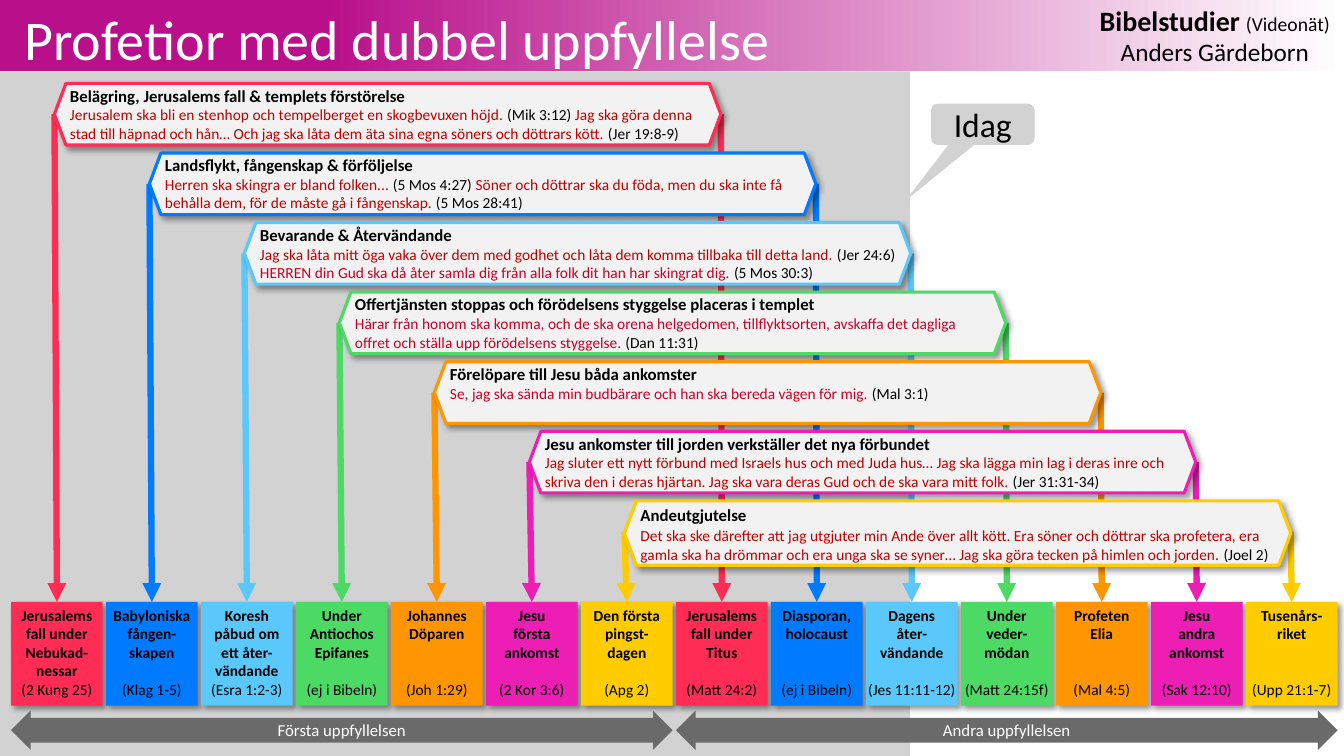
from lxml.etree import SubElement
from pptx import Presentation
from pptx.dml.color import RGBColor
from pptx.enum.shapes import MSO_CONNECTOR as Connector, MSO_SHAPE as Shape
from pptx.enum.text import MSO_ANCHOR as Anchor, MSO_AUTO_SIZE as AutoSize, PP_ALIGN as Align
from pptx.oxml.ns import qn
from pptx.util import Pt

COLOURS = {
    "red": "FF2D55", "blue": "007AFF", "sky": "5AC8FA", "green": "4CD964",
    "orange": "FF9500", "pink": "ED1EB4", "yellow": "FFCC00", "purple": "B90F8A",
    "white": "FFFFFF", "black": "000000", "past": "D2D2D2", "banner": "F2F2F2",
    "span": "6A6A6A", "quote": "C00000", "crimson": "C80026",
}
THEMES = ["red", "blue", "sky", "green", "orange", "pink", "yellow"]
STYLES = {
    "heading": ("black", {"size": Pt(12), "bold": True}),
    "quote": ("quote", {"size": Pt(11), "bold": False}),
    "crimson": ("crimson", {"size": Pt(11), "bold": False}),
    "reference": ("black", {"size": Pt(11), "bold": False}),
    "label": ("black", {"size": Pt(11), "bold": True}),
    "span": ("white", {"size": Pt(12)}),
    "title": ("white", {"size": Pt(40)}),
    "today": ("black", {"size": Pt(24)}),
    "channel": ("black", {"size": Pt(20), "bold": True}),
    "site": ("black", {"size": Pt(14)}),
    "author": ("black", {"size": Pt(18)}),
}
PITCH, COLUMN_WIDTH, LEFT = 67.85, 65.5, 7.9
LINE_HEIGHT = 13.4

EVENTS = [
    ("Jerusalems fall under Nebukad-nessar", 4, "(2 Kung 25)"),
    ("Babyloniska fången-skapen", 3, "(Klag 1-5)"),
    ("Koresh\npåbud om\nett åter-vändande", 4, "(Esra 1:2-3)"),
    ("Under\nAntiochos\nEpifanes", 3, "(ej i Bibeln)"),
    ("Johannes\nDöparen", 2, "(Joh 1:29)"),
    ("Jesu\nförsta\nankomst", 3, "(2 Kor 3:6)"),
    ("Den första pingst-\ndagen", 3, "(Apg 2)"),
    ("Jerusalems fall under Titus", 3, "(Matt 24:2)"),
    ("Diasporan,\nholocaust", 2, "(ej i Bibeln)"),
    ("Dagens\nåter-vändande", 3, "(Jes 11:11-12)"),
    ("Under\nveder-\nmödan", 3, "(Matt 24:15f)"),
    ("Profeten\nElia", 2, "(Mal 4:5)"),
    ("Jesu\nandra ankomst", 3, "(Sak 12:10)"),
    ("Tusenårs-\nriket", 2, "(Upp 21:1-7)"),
]
PROPHECIES = [
    ("Belägring, Jerusalems fall & templets förstörelse",
     [[("quote", "Jerusalem ska bli en stenhop och tempelberget en skogbevuxen höjd."),
       ("reference", " (Mik 3:12) "),
       ("quote", "Jag ska göra denna stad till häpnad och hån… Och jag ska låta dem äta "
                 "sina egna söners och döttrars kött."),
       ("reference", " (Jer 19:8-9)")]]),
    ("Landsflykt, fångenskap & förföljelse",
     [[("quote", "Herren ska skingra er bland folken... "),
       ("reference", "(5 Mos 4:27) "),
       ("quote", "Söner och döttrar ska du föda, men du ska inte få behålla dem, "
                 "för de måste gå i fångenskap. "),
       ("reference", "(5 Mos 28:41)")]]),
    ("Bevarande & Återvändande",
     [[("quote", "Jag ska låta mitt öga vaka över dem med godhet och låta dem komma "
                 "tillbaka till detta land. "),
       ("reference", "(Jer 24:6)")],
      [("crimson", "HERREN din Gud ska då åter samla dig från alla folk dit han har "
                   "skingrat dig. "),
       ("reference", "(5 Mos 30:3)")]]),
    ("Offertjänsten stoppas och förödelsens styggelse placeras i templet",
     [[("crimson", "Härar från honom ska komma, och de ska orena helgedomen, tillflyktsorten, "
                   "avskaffa det dagliga offret och ställa upp förödelsens styggelse. "),
       ("reference", "(Dan 11:31)")]]),
    ("Förelöpare till Jesu båda ankomster",
     [[("crimson", "Se, jag ska sända min budbärare och han ska bereda vägen för mig."),
       ("reference", " (Mal 3:1)")]]),
    ("Jesu ankomster till jorden verkställer det nya förbundet",
     [[("quote", "Jag sluter ett nytt förbund med Israels hus och med Juda hus… Jag ska lägga "
                 "min lag i deras inre och skriva den i deras hjärtan. Jag ska vara deras Gud "
                 "och de ska vara mitt folk."),
       ("reference", " (Jer 31:31-34)")]]),
    ("Andeutgjutelse",
     [[("quote", "Det ska ske därefter att jag utgjuter min Ande över allt kött. Era söner och "
                 "döttrar ska profetera, era gamla ska ha drömmar och era unga ska se syner… "
                 "Jag ska göra tecken på himlen och jorden."),
       ("reference", " (Joel 2)")]]),
]


def colour(name):
    return RGBColor.from_string(COLOURS[name])


def assign(target, values):
    for name, value in values.items():
        setattr(target, name, value)


def add_box(slide, kind, box, fill, adjustments=()):
    shape = slide.shapes.add_shape(kind, *map(Pt, box))
    shape.shadow.inherit = False
    shape.fill.solid()
    shape.fill.fore_color.rgb = colour(fill)
    shape.line.fill.background()
    for index, value in enumerate(adjustments):
        shape.adjustments[index] = value
    return shape


def add_shadow(shape):
    effects = shape.element.spPr.find(qn("a:effectLst"))
    shadow = SubElement(effects, qn("a:outerShdw"), blurRad=str(Pt(4)), dist=str(Pt(3)),
                        dir="2700000", algn="tl", rotWithShape="0")
    black = SubElement(shadow, qn("a:srgbClr"), val=COLOURS["black"])
    SubElement(black, qn("a:alpha"), val="40000")


def write(shape, paragraphs, margins, align=Align.LEFT, **frame_format):
    frame = shape.text_frame
    sides = ("margin_left", "margin_top", "margin_right", "margin_bottom")
    assign(frame, {"word_wrap": True, "vertical_anchor": Anchor.TOP,
                   **dict(zip(sides, map(Pt, margins))), **frame_format})
    for index, runs in enumerate(paragraphs):
        paragraph = frame.add_paragraph() if index else frame.paragraphs[0]
        paragraph.alignment = align
        for style, text in runs:
            run = paragraph.add_run()
            run.text = text
            ink, font_format = STYLES[style]
            assign(run.font, {"name": "Calibri", **font_format})
            run.font.color.rgb = colour(ink)
    return frame.paragraphs


def draw_header(slide, left, top, width, height):
    band = add_box(slide, Shape.RECTANGLE, (left, top, width, height), "purple")
    band.fill.gradient()
    band.fill.gradient_angle = 0
    for stop, (position, name) in zip(band.fill.gradient_stops, [(0.24, "purple"), (1, "white")]):
        stop.position = position
        stop.color.rgb = colour(name)
    credit = slide.shapes.add_textbox(Pt(left + width - 184.5), Pt(top + 2.2), Pt(184.5), Pt(46))
    write(credit, [[("channel", "Bibelstudier"), ("author", " "), ("site", "(Videonät)")],
                   [("author", "Anders Gärdeborn")]],
          (7.2, 0, 7.2, 0), Align.CENTER, word_wrap=False, auto_size=AutoSize.SHAPE_TO_FIT_TEXT)
    title = slide.shapes.title
    assign(title, {"left": Pt(left), "top": Pt(top), "width": Pt(width), "height": Pt(height)})
    write(title, [[("title", "Profetior med dubbel uppfyllelse")]], (17.3, 2.9, 7.2, 0),
          auto_size=AutoSize.NONE)
    slide.shapes.element.append(title.element)


def draw_events(slide, left, top, height):
    boxes = []
    for index, (label, lines, reference) in enumerate(EVENTS):
        theme = THEMES[index % len(THEMES)]
        box = add_box(slide, Shape.RECTANGLE,
                      (left + index * PITCH, top, COLUMN_WIDTH, height), theme)
        add_shadow(box)
        paragraphs = write(box, [[("label", line)] for line in label.split("\n")]
                           + [[("reference", reference)]], (0, 2.9, 0, 0), Align.CENTER)
        paragraphs[-1].space_before = Pt((4 - lines) * LINE_HEIGHT)
        boxes.append(box)
    return boxes


def draw_prophecy(slide, left, top, width, height, theme, prophecy, targets):
    for start, target in zip((left, left + width), targets):
        arrow = slide.shapes.add_connector(Connector.STRAIGHT, Pt(start), Pt(top + 22),
                                           target.left, target.top)
        arrow.end_connect(target, 0)
        arrow.line.width = Pt(4.5)
        arrow.line.color.rgb = colour(theme)
        SubElement(arrow.line._get_or_add_ln(), qn("a:tailEnd"), type="triangle")
        SubElement(arrow.element.spPr, qn("a:effectLst"))
    banner = add_box(slide, Shape.LEFT_RIGHT_ARROW, (left, top, width, height),
                     "banner", (1, 0.187))
    banner.line.width = Pt(2.25)
    banner.line.color.rgb = colour(theme)
    add_shadow(banner)
    heading, quotes = prophecy
    return write(banner, [[("heading", heading)], *quotes], (2.9, 1.4, 1.4, 1.4),
                 auto_size=AutoSize.SHAPE_TO_FIT_TEXT if len(quotes) > 1 else AutoSize.NONE)


def draw_prophecies(slide, left, top, step, boxes):
    half = len(THEMES)
    for index, (theme, prophecy) in enumerate(zip(THEMES, PROPHECIES)):
        last = index == half - 1
        paragraphs = draw_prophecy(slide, left + index * PITCH, top + index * step, 476,
                                   46 if last else 44, theme, prophecy,
                                   (boxes[index], boxes[index + half]))
        if last:
            for paragraph in paragraphs:
                paragraph.line_spacing = 1.07


def draw_spans(slide, left, top, height):
    half = len(THEMES)
    for index, name in enumerate(("Första uppfyllelsen", "Andra uppfyllelsen")):
        span = add_box(slide, Shape.LEFT_RIGHT_ARROW,
                       (left + index * half * PITCH, top, (half - 1) * PITCH + COLUMN_WIDTH, height),
                       "span", (0.628, 0.5))
        write(span, [[("span", name)]], (7.2, 2.9, 7.2, 3.6), Align.CENTER,
              vertical_anchor=Anchor.MIDDLE)


def draw_today(slide, left, top, width, height):
    callout = add_box(slide, Shape.ROUNDED_RECTANGULAR_CALLOUT, (left, top, width, height),
                      "past", (-0.745, 1.844, 0.167))
    write(callout, [[("today", "Idag")]], (7.2, 2.9, 7.2, 3.6), Align.CENTER,
          vertical_anchor=Anchor.MIDDLE)


def main():
    presentation = Presentation()
    assign(presentation, {"slide_width": Pt(960), "slide_height": Pt(540)})
    slide = presentation.slides.add_slide(presentation.slide_layouts[5])
    draw_header(slide, 0, 0, 960, 51)
    add_box(slide, Shape.RECTANGLE, (0, 51, 650, 489), "past")
    boxes = draw_events(slide, LEFT, 430, 74)
    draw_prophecies(slide, 38.9, 59.6, 49.7, boxes)
    draw_spans(slide, LEFT, 507.6, 28)
    draw_today(slide, 665, 74, 74, 29.5)
    presentation.save("out.pptx")


if __name__ == "__main__":
    main()
